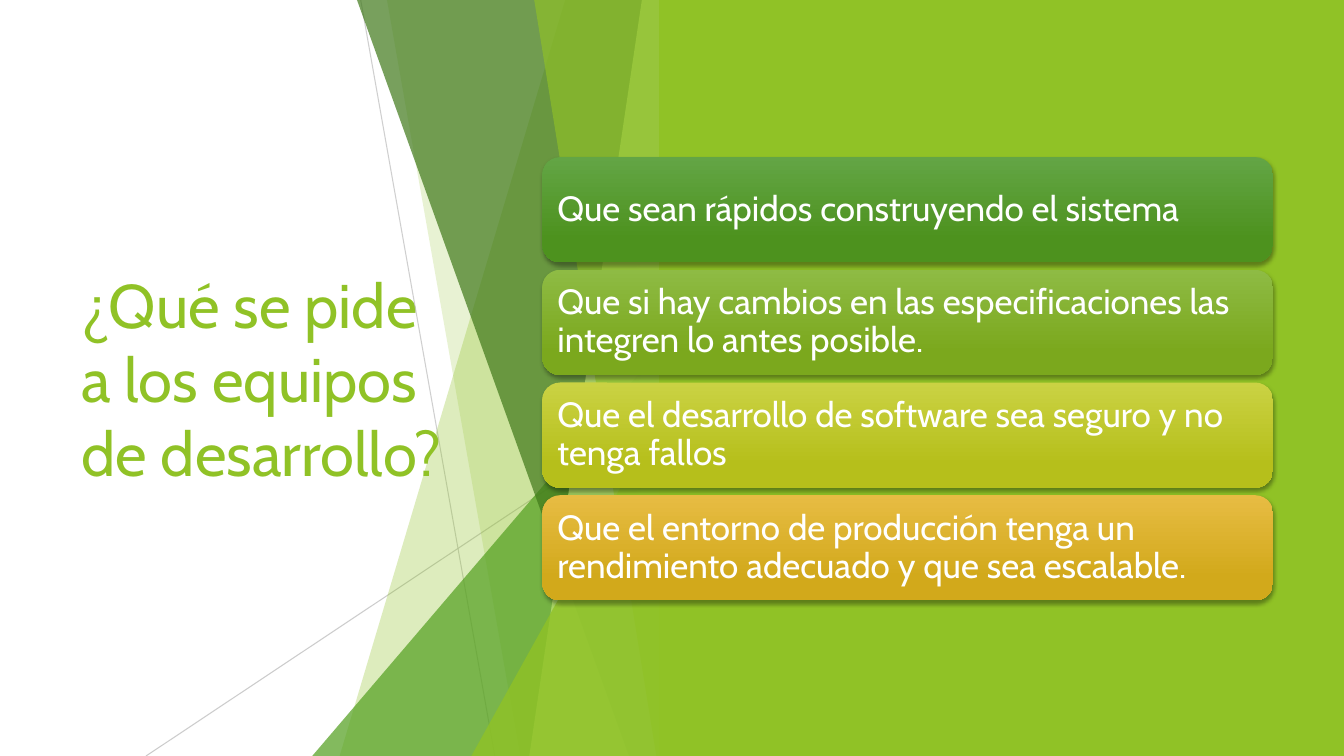
from lxml import etree
from pptx import Presentation
from pptx import util as u
from pptx.dml.color import RGBColor
from pptx.enum import shapes, text
from pptx.oxml import ns

TITLE = "¿Qué se pide a los equipos de desarrollo?"
CARDS = [  # text, top colour, bottom colour
    ("Que sean rápidos construyendo el sistema", "63A545", "4D921E"),
    ("Que si hay cambios en las especificaciones las integren lo antes posible.",
     "8EBB44", "7BA81D"),
    ("Que el desarrollo de software sea seguro y no tenga fallos", "CAD243", "B6BF1B"),
    ("Que el entorno de producción tenga un rendimiento adecuado y que sea escalable.",
     "E7BC43", "D2A91B"),
]
FONT, GREEN, WHITE = "Cabin", "90C226", "FFFFFF"

# Lengths in centimetres
WIDTH, HEIGHT = 33.87, 19.05
FACET_RIGHT, FACET_TOP = 16.92, -0.02
RAYS = [  # start, end, opacity
    ((9.09, 0), (12.47, HEIGHT), 75),
    ((FACET_RIGHT, 10.24), (3.68, HEIGHT), 80),
]
FACETS = [  # kind, two measures, colour, opacity; back to front
    ("band", 14.25, 8.56, GREEN, 30),  # band: left edge at the top and at the bottom
    ("band", 9.75, 13.11, GREEN, 20),
    ("corner", 7.87, 8.46, "54A021", 72),  # corner: left and top
    ("band", 8.99, 15.85, "3F7819", 70),
    ("band", 16.18, 13.34, "C0E474", 70),
    ("band", 13.46, 16.54, GREEN, 65),
    ("corner", 11.88, 9.98, GREEN, 80),
]
PANEL_LEFT = 16.61
CARD_LEFT, CARD_TOP, CARD_W, CARD_H, CARD_PITCH = 13.67, 3.96, 18.41, 2.65, 2.84


def rgb(value):
    return RGBColor.from_string(value)


def box(*lengths):
    return [u.Cm(length) for length in lengths]


def add_child(parent, tag, **attributes):
    return etree.SubElement(parent, ns.qn(tag), attributes)


def set_opacity(sp, percent):
    """Apply an opacity to the only colour in the shape's properties."""
    colour = next(sp._element.spPr.iter(ns.qn("a:srgbClr")))
    add_child(colour, "a:alpha", val=str(percent * 1000))


def paint(sp, colour, opacity=100):
    sp.shadow.inherit = False
    sp.fill.solid()
    sp.fill.fore_color.rgb = rgb(colour)
    sp.line.fill.background()
    if opacity < 100:
        set_opacity(sp, opacity)


def write(sp, words, size, colour, spacing=None, inset=0.25):
    tf = sp.text_frame
    tf.word_wrap = True
    tf.auto_size = text.MSO_AUTO_SIZE.NONE
    tf.vertical_anchor = text.MSO_ANCHOR.MIDDLE
    tf.margin_left = tf.margin_right = u.Cm(inset)
    p = tf.paragraphs[0]
    p.alignment = text.PP_ALIGN.LEFT
    if spacing:
        p.line_spacing = spacing
    r = p.add_run()
    r.text = words
    r.font.name, r.font.size = FONT, u.Pt(size)
    r.font.color.rgb = rgb(colour)


def add_ray(s, start, end, opacity):
    ray = s.shapes.add_connector(shapes.MSO_CONNECTOR.STRAIGHT, *box(*start, *end))
    ray.line.color.rgb = rgb("BFBFBF")
    ray.line.width = u.Pt(0.75)
    set_opacity(ray, opacity)
    add_child(ray._element.spPr, "a:effectLst")


def add_band(s, top_x, bottom_x):
    builder = s.shapes.build_freeform(*box(top_x, FACET_TOP))
    corners = [(FACET_RIGHT, FACET_TOP), (FACET_RIGHT, HEIGHT), (bottom_x, HEIGHT)]
    builder.add_line_segments([box(*corner) for corner in corners], close=True)
    return builder.convert_to_shape()


def add_corner(s, left, top):
    """Add a right triangle whose apex stands on the facets' right edge."""
    sp = s.shapes.add_shape(shapes.MSO_SHAPE.ISOSCELES_TRIANGLE,
                            *box(left, top, FACET_RIGHT - left, HEIGHT - top))
    sp.adjustments[0] = 1
    return sp


def add_card(s, index, words, top_colour, bottom_colour):
    sp = s.shapes.add_shape(
        shapes.MSO_SHAPE.ROUNDED_RECTANGLE,
        *box(CARD_LEFT, CARD_TOP + index * CARD_PITCH, CARD_W, CARD_H))
    sp.shadow.inherit = False
    sp.line.fill.background()
    sp.fill.gradient()
    sp.fill.gradient_angle = 270
    stops = zip(sp.fill.gradient_stops, (top_colour, bottom_colour), (0, 0.78))
    for stop, colour, position in stops:
        stop.color.rgb = rgb(colour)
        stop.position = position
    effects = sp._element.spPr.find(ns.qn("a:effectLst"))
    shadow = add_child(effects, "a:outerShdw", blurRad=str(u.Pt(3)),
                       dist=str(u.Pt(2)), dir="5400000", rotWithShape="0")
    add_child(add_child(shadow, "a:srgbClr", val="000000"), "a:alpha", val="35000")
    write(sp, words, 25, WHITE, spacing=0.9)


def main():
    prs = Presentation()
    prs.slide_width, prs.slide_height = box(WIDTH, HEIGHT)
    s = prs.slides.add_slide(prs.slide_layouts[5])

    title = s.shapes.title
    title.left, title.top, title.width, title.height = box(1.8, 3.84, 9.86, 11.38)
    write(title, TITLE, 44, GREEN)

    for ray in RAYS:
        add_ray(s, *ray)
    builders = {"band": add_band, "corner": add_corner}
    for kind, first, second, colour, opacity in FACETS:
        paint(builders[kind](s, first, second), colour, opacity)

    panel = s.shapes.add_shape(shapes.MSO_SHAPE.RECTANGLE,
                               *box(PANEL_LEFT, 0, WIDTH - PANEL_LEFT, HEIGHT))
    paint(panel, GREEN)

    for index, card in enumerate(CARDS):
        add_card(s, index, *card)
    prs.save("out.pptx")


if __name__ == "__main__":
    main()
